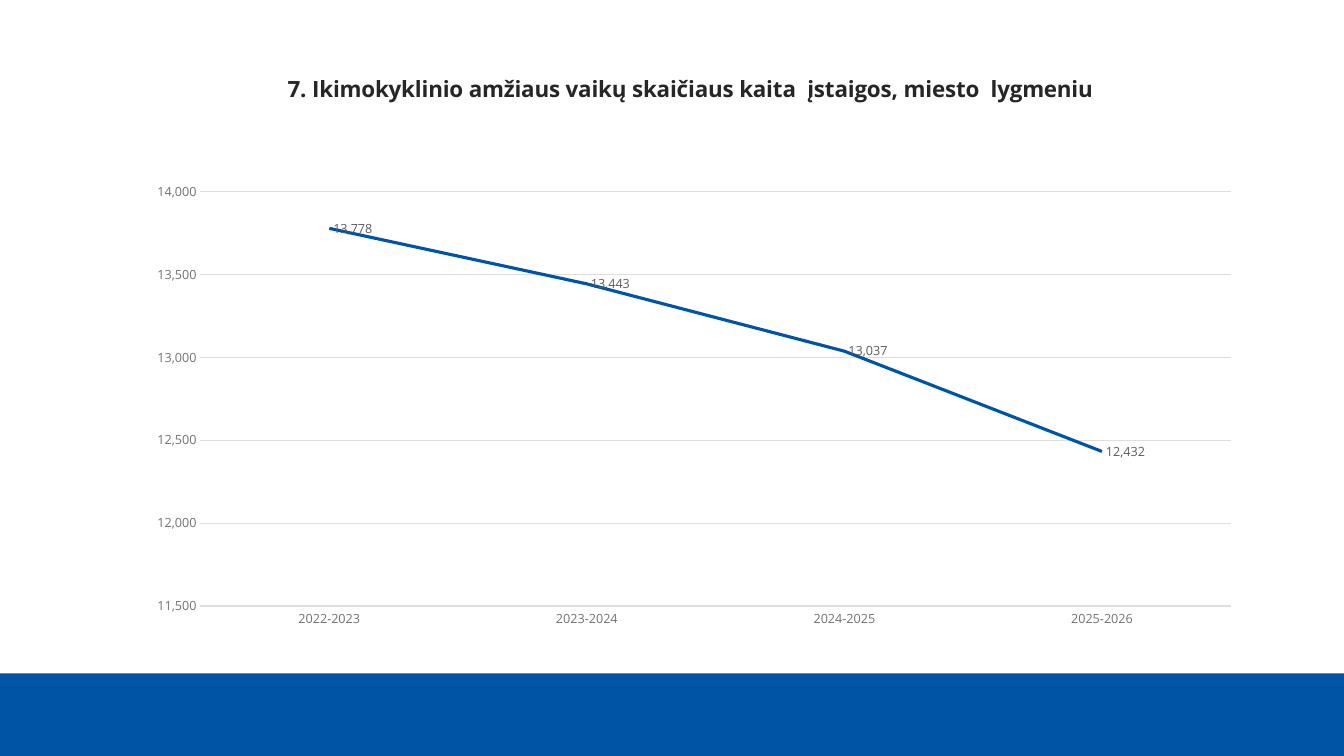
"""Build a slide with a line chart of preschool children numbers by school year."""
from typing import NamedTuple

from lxml import etree
from pptx import Presentation
from pptx.chart import data as chart_data
from pptx.dml.color import RGBColor
from pptx.enum import chart as ch, shapes
from pptx.oxml.ns import qn
from pptx.util import Pt

FONT = "Open Sans"
BLUE, INK, GREY, LABEL, RULE = "0054A5", "262626", "727272", "5C5C5C", "DEDEDE"
TITLE = "7. Ikimokyklinio amžiaus vaikų skaičiaus kaita  įstaigos, miesto  lygmeniu"


class SchoolYear(NamedTuple):
    name: str
    children: int


class Placement(NamedTuple):
    x: float
    y: float
    w: float | None = None
    h: float | None = None


SCHOOL_YEARS = [
    SchoolYear("2022-2023", 13778),
    SchoolYear("2023-2024", 13443),
    SchoolYear("2024-2025", 13037),
    SchoolYear("2025-2026", 12432),
]


def paint(color_format, hex_color: str) -> None:
    color_format.rgb = RGBColor.from_string(hex_color)


def style_font(font, size: float, hex_color: str, bold: bool = False) -> None:
    font.name, font.size, font.bold = FONT, Pt(size), bold
    paint(font.color, hex_color)


def style_line(line, hex_color: str, width: float) -> None:
    line.width = Pt(width)
    line.fill.solid()
    paint(line.fill.fore_color, hex_color)


def place(element, index: int, placement: Placement) -> None:
    for old_layout in element.findall(qn("c:layout")):
        element.remove(old_layout)
    layout = etree.Element(qn("c:layout"))
    manual = etree.SubElement(layout, qn("c:manualLayout"))
    settings = {"xMode": "edge", "yMode": "edge", **placement._asdict()}
    if placement.w is not None:
        settings = {"layoutTarget": "inner", **settings}
    for tag, value in settings.items():
        if value is not None:
            etree.SubElement(manual, qn(f"c:{tag}")).set("val", str(value))
    element.insert(index, layout)


def add_footer_band(slide) -> None:
    band = slide.shapes.add_shape(
        shapes.MSO_SHAPE.RECTANGLE, Pt(0), Pt(481), Pt(960), Pt(59))
    band.shadow.inherit = False
    band.fill.solid()
    paint(band.fill.fore_color, BLUE)
    band.line.fill.background()


def add_children_chart(slide):
    children = chart_data.CategoryChartData(number_format="#,##0")
    children.categories = [year.name for year in SCHOOL_YEARS]
    children.add_series("Series 1", [year.children for year in SCHOOL_YEARS])
    chart = slide.shapes.add_chart(
        ch.XL_CHART_TYPE.LINE, Pt(95), Pt(32.4), Pt(790.5), Pt(433.5), children).chart
    chart.has_legend = False
    style_font(chart.font, 10, INK)
    place(chart._chartSpace.chart.plotArea, 0, Placement(0.061, 0.241, 0.931, 0.683))
    return chart


def style_title(chart) -> None:
    chart.has_title = True
    heading = chart.chart_title
    heading.text_frame.text = TITLE
    style_font(heading.text_frame.paragraphs[0].runs[0].font, 16, INK, bold=True)
    heading.include_in_layout = False
    place(heading._element, 1, Placement(0.136, 0.036))


def style_axes(chart) -> None:
    years, counts = chart.category_axis, chart.value_axis
    for axis in (years, counts):
        axis.major_tick_mark = axis.minor_tick_mark = ch.XL_TICK_MARK.NONE
        style_font(axis.tick_labels.font, 9, GREY)
    style_line(years.format.line, RULE, 0.75)
    counts.format.line.fill.background()
    counts.has_major_gridlines = True
    style_line(counts.major_gridlines.format.line, RULE, 0.75)
    counts.minimum_scale, counts.maximum_scale, counts.major_unit = 11500, 14000, 500
    counts.tick_labels.number_format = "#,##0"
    counts.tick_labels.number_format_is_linked = False


def style_trend(chart) -> None:
    plot = chart.plots[0]
    plot.vary_by_categories = False
    trend = plot.series[0]
    trend.smooth = False
    trend.marker.style = ch.XL_MARKER_STYLE.NONE
    style_line(trend.format.line, BLUE, 2.25)
    labels = trend.data_labels
    labels.show_value = True
    labels.position = ch.XL_LABEL_POSITION.RIGHT
    labels.number_format = "#,##0"
    labels.number_format_is_linked = False
    style_font(labels.font, 9, LABEL)


def main() -> None:
    deck = Presentation()
    deck.slide_width, deck.slide_height = Pt(960), Pt(540)
    slide = deck.slides.add_slide(deck.slide_layouts[6])
    add_footer_band(slide)
    chart = add_children_chart(slide)
    style_title(chart)
    style_axes(chart)
    style_trend(chart)
    deck.save("out.pptx")


if __name__ == "__main__":
    main()
